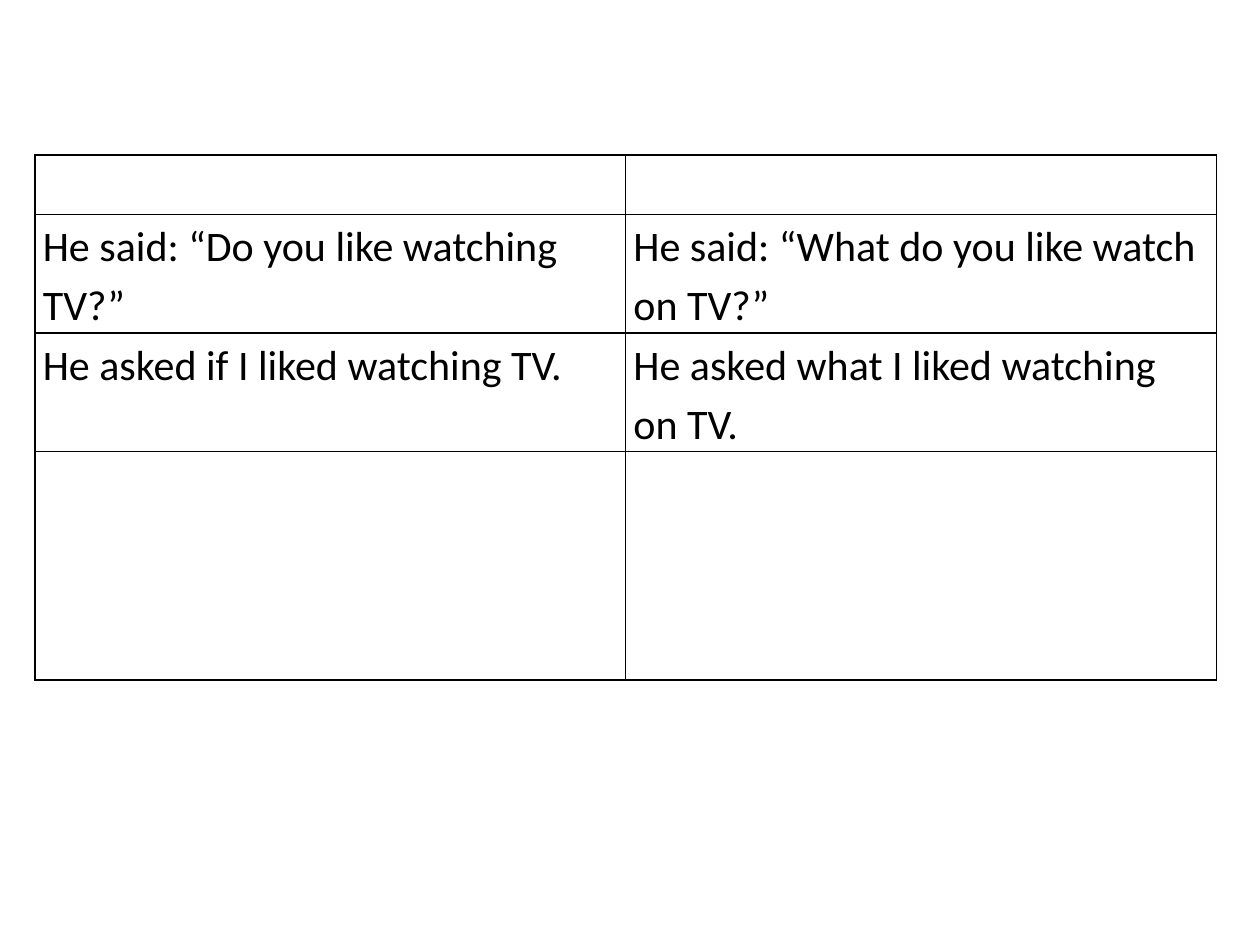
"""Builds a slide with a table of direct and reported questions."""
from dataclasses import dataclass

from lxml.etree import SubElement
from pptx import Presentation
from pptx.dml.color import RGBColor
from pptx.oxml.ns import qn
from pptx.util import Pt


def colour(hex_code):
    return RGBColor.from_string(hex_code)


@dataclass
class SlideWriter:
    slide: object
    font: str = "Calibri"
    size: float = 24
    ink: str = "000000"
    paper: str = "FFFFFF"
    line_spacing: float = 1.15
    inset: float = 4.5
    border: float = 1

    def borders(self, cell):
        properties = cell._tc.get_or_add_tcPr()
        for position, side in enumerate(("lnL", "lnR", "lnT", "lnB")):
            edge = SubElement(properties, qn(f"a:{side}"), w=str(Pt(self.border)))
            fill = SubElement(edge, qn("a:solidFill"))
            SubElement(fill, qn("a:srgbClr"), val=self.ink)
            properties.insert(position, edge)

    def cell(self, cell, wording):
        cell.margin_left = cell.margin_right = Pt(self.inset)
        cell.margin_top = cell.margin_bottom = 0
        cell.fill.solid()
        cell.fill.fore_color.rgb = colour(self.paper)
        self.borders(cell)
        cell.text = wording
        paragraph = cell.text_frame.paragraphs[0]
        paragraph.line_spacing = self.line_spacing
        paragraph.font.name = self.font
        paragraph.font.size = Pt(self.size)
        paragraph.font.bold = False
        paragraph.font.color.rgb = colour(self.ink)

    def table(self, left, top, width, heights, rows):
        columns = len(rows[0])
        table = self.slide.shapes.add_table(
            len(rows), columns, Pt(left), Pt(top), Pt(width), Pt(sum(heights))
        ).table
        table.first_row = table.horz_banding = False
        for column in table.columns:
            column.width = Pt(width / columns)
        for row, height, wordings in zip(table.rows, heights, rows):
            row.height = Pt(height)
            for cell, wording in zip(row.cells, wordings):
                self.cell(cell, wording)


def main():
    deck = Presentation()
    deck.slide_width, deck.slide_height = Pt(720), Pt(540)
    blank_layout = deck.slide_layouts[6]
    writer = SlideWriter(deck.slides.add_slide(blank_layout))
    questions = [
        ("", ""),
        ("He said: “Do you like watching TV?”",
         "He said: “What do you like watch on TV?”"),
        ("He asked if I liked watching TV.",
         "He asked what I liked watching on TV."),
        ("", ""),
    ]
    writer.table(20, 88.5, 675, (34, 67.75, 67.75, 130.5), questions)
    deck.save("out.pptx")


if __name__ == "__main__":
    main()
